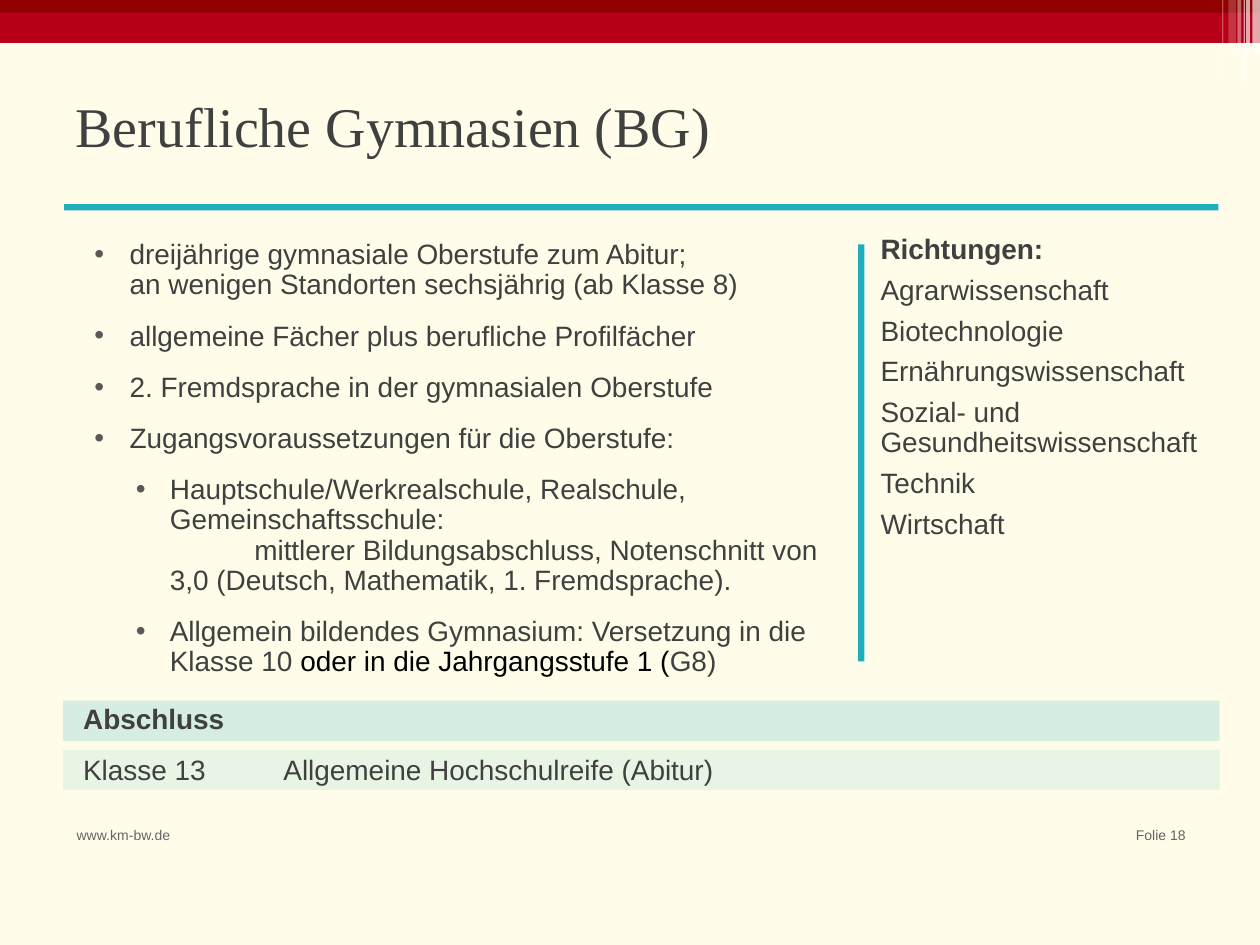
from lxml.etree import SubElement as Sub
from pptx import Presentation
from pptx.dml.color import RGBColor
from pptx.enum.shapes import MSO_SHAPE as Shape
from pptx.enum.text import MSO_ANCHOR as Anchor, PP_ALIGN as Align
from pptx.oxml.ns import qn
from pptx.util import Inches, Pt

TEAL, TEXT, GREY = "1EAEBD", "404040", "646464"


def paint(target, color):
    target.solid()
    target.fore_color.rgb = RGBColor.from_string(color)


def style(font, size=16, color=TEXT, bold=False, name="Arial"):
    font.name, font.size, font.bold = name, Pt(size), bold
    font.color.rgb = RGBColor.from_string(color)


def place(box):
    return [Inches(v) for v in box]


def bar(slide, box, color, alpha=100):
    shape = slide.shapes.add_shape(Shape.RECTANGLE, *place(box))
    shape.shadow.inherit = False
    shape.line.fill.background()
    paint(shape.fill, color)
    if alpha < 100:
        tone = shape.fill._xPr.find(qn("a:solidFill"))[0]
        Sub(tone, qn("a:alpha"), val=str(alpha * 1000))


def text_box(slide, box):
    frame = slide.shapes.add_textbox(*place(box)).text_frame
    frame.word_wrap = True
    return frame


def add_para(frame, first, text, after):
    para = frame.paragraphs[0] if first else frame.add_paragraph()
    para.text = text
    para.line_spacing = 0.9
    para.space_after = Pt(after)
    return para


def set_bullet(para, left, hang, tab):
    props = para._p.get_or_add_pPr()
    props.set("marL", str(Inches(left)))
    props.set("indent", str(Inches(-hang)))
    Sub(Sub(props, qn("a:buClr")), qn("a:srgbClr"), val="595959")
    Sub(props, qn("a:buFont"), typeface="Arial")
    Sub(props, qn("a:buChar"), char="•")
    if tab:
        Sub(Sub(props, qn("a:tabLst")), qn("a:tab"), pos=str(Inches(tab)), algn="l")


def add_banner(slide, box):
    left, top, width, height = box
    bar(slide, box, "B70017")
    bar(slide, (left, top, width, 0.1), "920000")
    # Pale stripes: distance from the right edge, width, height, opacity
    stripes = [(0.11, 0.03, 0.43, 65), (0.06, 0.06, 0.43, 65),
               (0.3, 0.01, 0.64, 30), (0.13, 0.01, 0.68, 60),
               (0.25, 0.06, 0.43, 20), (0.18, 0.03, 0.43, 40)]
    for gap, wide, high, alpha in stripes:
        bar(slide, (left + width - gap, top, wide, high), "FFFFFF", alpha)


def add_title(slide, box, text):
    title = slide.shapes.title
    title.left, title.top, title.width, title.height = place(box)
    frame = title.text_frame
    frame.text = text
    frame.vertical_anchor = Anchor.MIDDLE
    para = frame.paragraphs[0]
    para.alignment = Align.LEFT
    style(para.runs[0].font, 32, name="Times New Roman")


def add_points(slide, box, points):
    frame = text_box(slide, box)
    for i, (level, text) in enumerate(points):
        para = add_para(frame, i == 0, text, 12)
        para.level = level
        left, hang = [(0.4, 0.28), (0.72, 0.27)][level]
        set_bullet(para, left, hang, 1.39 if "\t" in text else None)
        for run in para.runs:
            style(run.font)
    # The last point ends in runs of differing colour
    for text, color in [("oder in die Jahrgangsstufe 1 (", "000000"), ("G8)", TEXT)]:
        run = para.add_run()
        run.text = text
        style(run.font, color=color)


def add_fields(slide, box, lines):
    frame = text_box(slide, box)
    for i, text in enumerate(lines):
        para = add_para(frame, i == 0, text, 6)
        style(para.runs[0].font, bold=i == 0)


def add_degrees(slide, box, rows):
    left, top, width, height = box
    # Tinted bands behind the rows
    for i, alpha in enumerate((18, 10)):
        bar(slide, (0.5, top + 0.02 + 0.39 * i, 9.18, 0.32), TEAL, alpha)
    table = slide.shapes.add_table(2, 2, *place(box)).table
    table.first_row = table.horz_banding = False
    table.columns[0].width = Inches(1.59)
    table.columns[1].width = Inches(width - 1.59)
    for r, row in enumerate(rows):
        for c, text in enumerate(row):
            cell = table.cell(r, c)
            cell.text = text
            props = cell._tc.get_or_add_tcPr()
            for side in ("lnL", "lnR", "lnT", "lnB"):
                Sub(Sub(props, qn("a:" + side), w="0"), qn("a:noFill"))
            cell.fill.background()
            style(cell.text_frame.paragraphs[0].font, bold=r == 0)
            for run in cell.text_frame.paragraphs[0].runs:
                style(run.font, bold=r == 0)
    table.cell(0, 0).merge(table.cell(0, 1))


def add_footer(slide, box, site, page):
    left, top, width, height = box
    for text, x, align in [(site, left, Align.LEFT),
                           (page, left + width - 1, Align.RIGHT)]:
        para = text_box(slide, (x, top, 1, height)).paragraphs[0]
        para.text = text
        para.alignment = align
        style(para.runs[0].font, 8, GREY)


def main():
    deck = Presentation()
    deck.slide_width, deck.slide_height = Inches(10), Inches(7.5)
    slide = deck.slides.add_slide(deck.slide_layouts[5])
    paint(slide.background.fill, "FFFDE9")

    add_banner(slide, (0, 0, 10, 0.34))
    add_title(slide, (0.5, 0.61, 9, 0.77), "Berufliche Gymnasien (BG)")
    # Rules below the title and between the columns
    bar(slide, (0.51, 1.62, 9.16, 0.05), TEAL)
    bar(slide, (6.81, 1.94, 0.05, 3.31), TEAL)

    add_points(slide, (0.53, 1.86, 6.38, 3.78), [
        (0, "dreijährige gymnasiale Oberstufe zum Abitur;\v"
            "an wenigen Standorten sechsjährig (ab Klasse 8)"),
        (0, "allgemeine Fächer plus berufliche Profilfächer"),
        (0, "2. Fremdsprache in der gymnasialen Oberstufe"),
        (0, "Zugangsvoraussetzungen für die Oberstufe:"),
        (1, "Hauptschule/Werkrealschule, Realschule, Gemeinschaftsschule:\v"
            "\tmittlerer Bildungsabschluss, Notenschnitt von 3,0 "
            "(Deutsch, Mathematik, 1. Fremdsprache)."),
        (1, "Allgemein bildendes Gymnasium: Versetzung in die Klasse 10 "),
    ])
    add_fields(slide, (6.89, 1.82, 2.81, 2.55), [
        "Richtungen:", "Agrarwissenschaft", "Biotechnologie",
        "Ernährungswissenschaft", "Sozial- und Gesundheitswissenschaft",
        "Technik", "Wirtschaft"])
    add_degrees(slide, (0.56, 5.54, 8.88, 0.81), [
        ("Abschluss", ""),
        ("Klasse 13", "Allgemeine Hochschulreife (Abitur)")])
    add_footer(slide, (0.51, 6.51, 9, 0.39), "www.km-bw.de", "Folie 18")
    deck.save("out.pptx")


if __name__ == "__main__":
    main()
